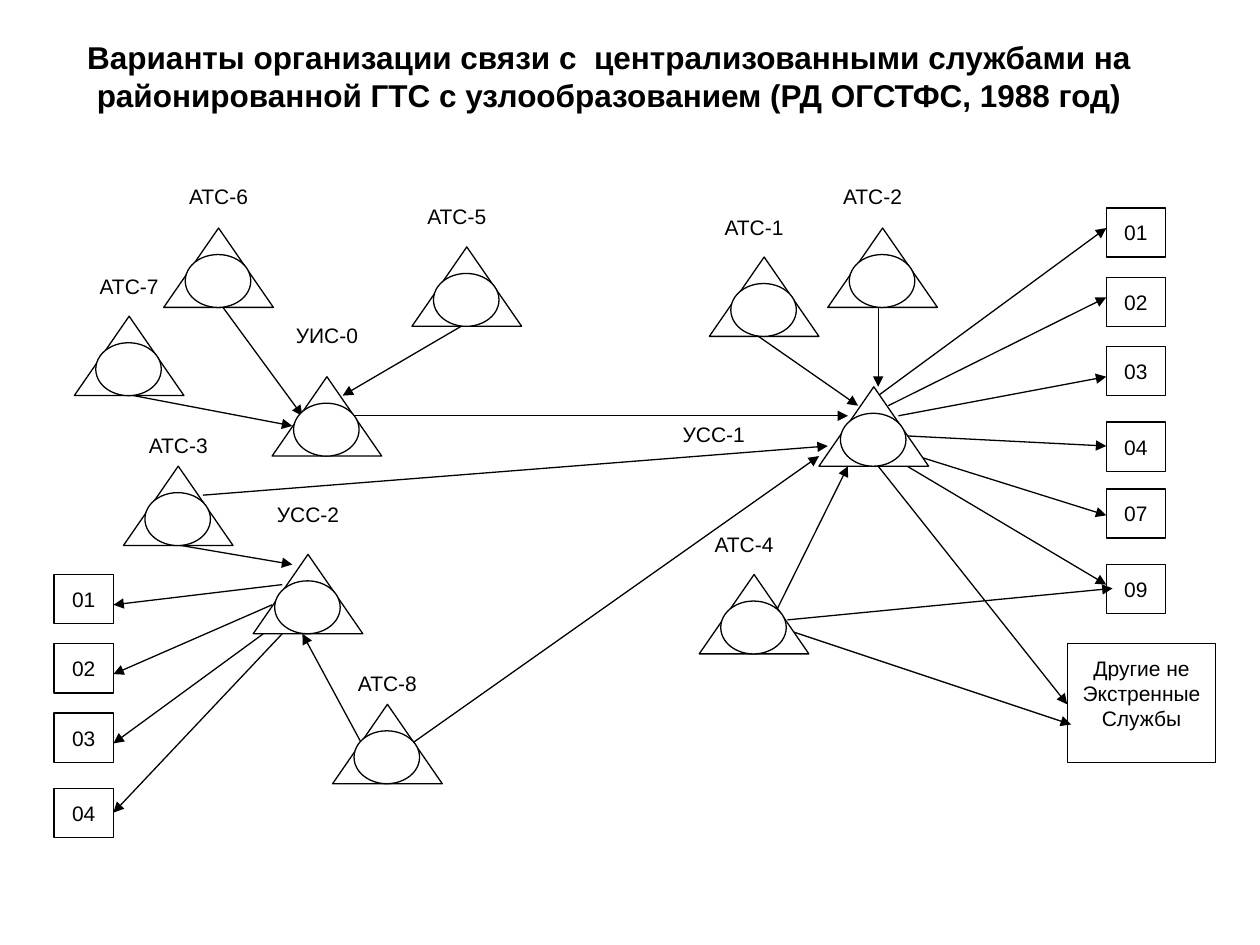
"""Build a slide on call routing from city exchanges to central services."""
from lxml.etree import SubElement
from pptx import Presentation
from pptx.dml.color import RGBColor
from pptx.enum.shapes import MSO_CONNECTOR, MSO_SHAPE
from pptx.enum.text import MSO_ANCHOR, PP_ALIGN
from pptx.oxml.ns import qn
from pptx.util import Inches, Pt

BLACK = RGBColor(0, 0, 0)
WHITE = RGBColor(255, 255, 255)
FONT = "Arial"

TITLE = ("Варианты организации связи с  централизованными службами на "
         "районированной ГТС с узлообразованием (РД ОГСТФС, 1988 год)")
OTHER = "Другие не\nЭкстренные\nСлужбы"

NODES = [
    ("АТС-6", (1.3, 1.81), (1.38, 1.41)),
    ("АТС-7", (0.59, 2.51), (0.67, 2.12)),
    ("АТС-5", (3.27, 1.96), (3.27, 1.57)),
    ("УИС-0", (2.16, 2.99), (2.24, 2.51)),
    ("АТС-3", (0.98, 3.7), (1.06, 3.38)),
    ("УСС-2", (2.01, 4.4), (2.09, 3.93)),
    ("АТС-8", (2.64, 5.59), (2.72, 5.27)),
    ("АТС-1", (5.63, 2.04), (5.63, 1.65)),
    ("АТС-2", (6.57, 1.81), (6.57, 1.41)),
    ("УСС-1", (6.5, 3.07), (5.31, 3.3)),
    ("АТС-4", (5.55, 4.56), (5.55, 4.17)),
]
BANKS = [
    (0.43, [("01", 4.56), ("02", 5.11), ("03", 5.66), ("04", 6.26)]),
    (8.78, [("01", 1.65), ("02", 2.2), ("03", 2.75),
            ("04", 3.35), ("07", 3.88), ("09", 4.48)]),
]
LINKS = [
    (1.77, 2.44, 2.4, 3.3), (1.06, 3.14, 2.32, 3.38),
    (3.66, 2.59, 2.72, 3.14), (2.87, 5.9, 2.4, 5.03),
    (1.38, 4.32, 2.32, 4.48), (2.8, 3.3, 6.73, 3.3),
    (1.61, 3.93, 6.57, 3.54), (3.27, 5.9, 6.5, 3.62),
    (6.02, 2.67, 6.81, 3.22), (6.97, 2.44, 6.97, 3.07),
    (6.17, 4.83, 6.73, 3.7), (6.97, 3.14, 8.78, 1.81),
    (7.05, 3.22, 8.78, 2.36), (7.13, 3.3, 8.78, 2.99),
    (7.2, 3.46, 8.78, 3.54), (7.28, 3.62, 8.78, 4.09),
    (7.2, 3.7, 8.78, 4.64), (6.97, 3.7, 8.47, 5.59),
    (2.24, 4.64, 0.9, 4.8), (2.16, 4.8, 0.9, 5.35),
    (2.09, 5.03, 0.9, 5.9), (2.24, 5.03, 0.9, 6.45),
    (6.25, 4.92, 8.83, 4.67), (6.25, 5, 8.5, 5.75),
]


def write(shape, text, size=12, bold=False, wrap=False):
    frame = shape.text_frame
    frame.text = text
    frame.word_wrap = wrap
    for para in frame.paragraphs:
        para.alignment = PP_ALIGN.CENTER
        for run in para.runs:
            run.font.name = FONT
            run.font.size = Pt(size)
            run.font.bold = bold
            run.font.color.rgb = BLACK


def label(slide, text, area, **style):
    write(slide.shapes.add_textbox(*map(Inches, area)), text, **style)


def draw(shapes, kind, *area):
    shape = shapes.add_shape(kind, *map(Inches, area))
    shape.shadow.inherit = False
    shape.fill.solid()
    shape.fill.fore_color.rgb = WHITE
    shape.line.color.rgb = BLACK
    shape.line.width = Pt(0.75)
    return shape


def box(slide, text, *area):
    shape = draw(slide.shapes, MSO_SHAPE.RECTANGLE, *area)
    write(shape, text)
    shape.text_frame.vertical_anchor = MSO_ANCHOR.MIDDLE
    return shape


def node(slide, x, y):
    parts = slide.shapes.add_group_shape().shapes
    draw(parts, MSO_SHAPE.FLOWCHART_EXTRACT, x, y, 0.87, 0.63)
    draw(parts, MSO_SHAPE.FLOWCHART_CONNECTOR, x + 0.17, y + 0.21, 0.52, 0.42)


def arrow(slide, ends):
    link = slide.shapes.add_connector(MSO_CONNECTOR.STRAIGHT, *map(Inches, ends))
    link.line.color.rgb = BLACK
    link.line.width = Pt(0.75)
    SubElement(link.line._get_or_add_ln(), qn("a:tailEnd"), type="triangle")
    SubElement(link._element.spPr, qn("a:effectLst"))


def main():
    deck = Presentation()
    deck.slide_width, deck.slide_height = Inches(10), Inches(7.5)
    slide = deck.slides.add_slide(deck.slide_layouts[6])
    label(slide, TITLE, (0.42, 0.25, 8.83, 0.71), size=18, bold=True, wrap=True)
    for left, rows in BANKS:
        for code, top in rows:
            box(slide, code, left, top, 0.47, 0.39)
    other = box(slide, OTHER, 8.47, 5.11, 1.18, 0.94).text_frame
    other.vertical_anchor = MSO_ANCHOR.TOP
    other.margin_top = Inches(0.09)
    for ends in LINKS:
        arrow(slide, ends)
    for name, place, spot in NODES:
        node(slide, *place)
        label(slide, name, (*spot, 0.71, 0.3))
    deck.save("out.pptx")


if __name__ == "__main__":
    main()
